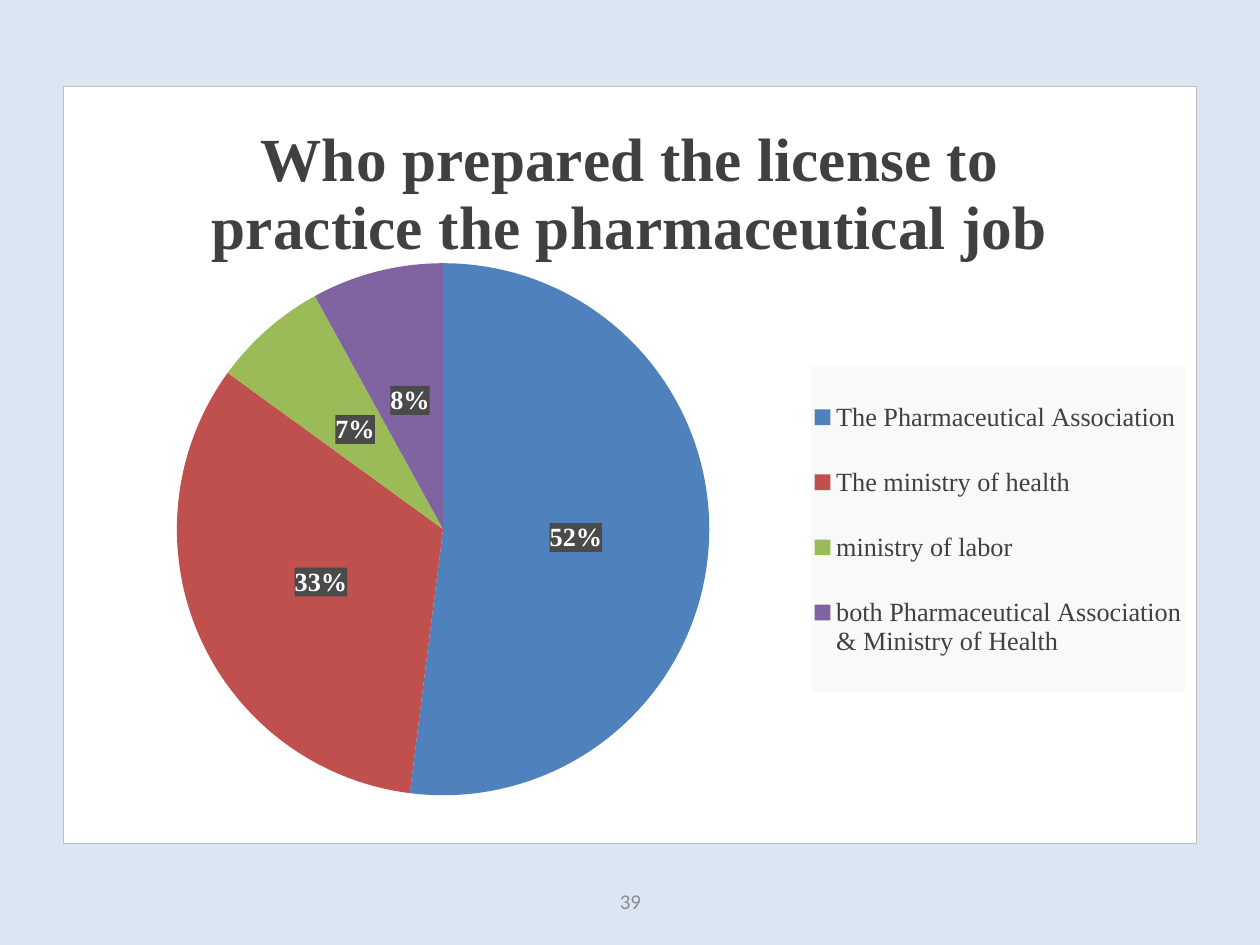
from lxml import etree
from pptx import Presentation, util as u
from pptx.chart.data import CategoryChartData
from pptx.dml.color import RGBColor
from pptx.enum import chart as ch, text
from pptx.oxml import parse_xml
from pptx.oxml.ns import nsdecls, qn

PX = u.Inches(1) // 126
BACKGROUND = RGBColor(0xDC, 0xE6, 0xF2)
WHITE = RGBColor(0xFF, 0xFF, 0xFF)
BLACK = RGBColor(0, 0, 0)
INK = RGBColor(0x40, 0x40, 0x40)
BORDER = RGBColor(0xBF, 0xBF, 0xBF)
LABEL_BOX = RGBColor(0x4A, 0x4A, 0x4A)
LEGEND_BOX = RGBColor(0xF9, 0xF9, 0xF9)
PAGE_GREY = RGBColor(0x8C, 0x8C, 0x8C)
SERIF = "Times New Roman"

ANSWERS = [
    ("The Pharmaceutical Association", 52, RGBColor(0x4F, 0x81, 0xBD)),
    ("The ministry of health", 33, RGBColor(0xC0, 0x50, 0x4D)),
    ("ministry of labor", 7, RGBColor(0x9B, 0xBB, 0x59)),
    ("both Pharmaceutical Association & Ministry of Health", 8,
     RGBColor(0x80, 0x64, 0xA2)),
]


def add_box(part, fill, border=None):
    """Give a chart part that already has text properties a fill and a border."""
    line = (f'<a:ln w="9525"><a:solidFill><a:srgbClr val="{border}"/></a:solidFill></a:ln>'
            if border else '<a:ln><a:noFill/></a:ln>')
    part.find(qn("c:txPr")).addprevious(parse_xml(
        f'<c:spPr {nsdecls("c", "a")}><a:solidFill><a:srgbClr val="{fill}"/>'
        f'</a:solidFill>{line}</c:spPr>'))


def set_layout(part, x, y, w, h, inner=False):
    """Place a chart part by fractions of the chart area."""
    for old in part.findall(qn("c:layout")):
        part.remove(old)
    layout = etree.Element(qn("c:layout"))
    manual = etree.SubElement(layout, qn("c:manualLayout"))
    settings = [("layoutTarget", "inner")] if inner else []
    settings += [("xMode", "edge"), ("yMode", "edge"),
                 ("x", x), ("y", y), ("w", w), ("h", h)]
    for tag, value in settings:
        etree.SubElement(manual, qn(f"c:{tag}")).set("val", str(value))
    position = part.find(qn("c:legendPos"))
    if position is None:
        part.insert(0, layout)
    else:
        position.addnext(layout)


prs = Presentation()
prs.slide_width, prs.slide_height = 1260 * PX, 945 * PX
slide = prs.slides.add_slide(prs.slide_layouts[6])
slide.background.fill.solid()
slide.background.fill.fore_color.rgb = BACKGROUND

# Pie chart
answers = CategoryChartData()
answers.categories = [name for name, _, _ in ANSWERS]
answers.add_series("Series 1", [share for _, share, _ in ANSWERS])
chart = slide.shapes.add_chart(
    ch.XL_CHART_TYPE.PIE, 63 * PX, 86 * PX, 1134 * PX, 758 * PX, answers).chart
chart.font.name, chart.font.size = "Calibri", u.Pt(10)
chart.font.color.rgb = BLACK
add_box(chart.element, WHITE, BORDER)

title = chart.chart_title.text_frame
title.text = "Who prepared the license to practice the pharmaceutical job"
title_font = title.paragraphs[0].runs[0].font
title_font.name, title_font.size, title_font.bold = SERIF, u.Pt(35), True
title_font.color.rgb = INK
chart.chart_title.include_in_layout = False

plot = chart.plots[0]
plot.vary_by_categories = True
set_layout(chart.element.chart.plotArea, 0.1, 0.21, 0.47, 0.75, inner=True)
for index, (_, _, color) in enumerate(ANSWERS):
    fill = plot.series[0].points[index].format.fill
    fill.solid()
    fill.fore_color.rgb = color

# Percentages on the slices
labels = plot.series[0].data_labels
labels.show_percentage, labels.show_value = True, False
labels.number_format, labels.number_format_is_linked = "0%", False
labels.position = ch.XL_LABEL_POSITION.CENTER
labels.font.name, labels.font.size, labels.font.bold = SERIF, u.Pt(15), True
labels.font.color.rgb = WHITE
add_box(plot.series[0]._element.find(qn("c:dLbls")), LABEL_BOX)

# Legend
chart.has_legend = True
legend = chart.legend
legend.position = ch.XL_LEGEND_POSITION.RIGHT
legend.include_in_layout = False
legend.font.name, legend.font.size = SERIF, u.Pt(15)
legend.font.color.rgb = INK
set_layout(legend._element, 0.66, 0.37, 0.33, 0.43)
add_box(legend._element, LEGEND_BOX)

# Page number
page = slide.shapes.add_textbox(431 * PX, 876 * PX, 399 * PX, 50 * PX).text_frame
page.word_wrap = True
page.vertical_anchor = text.MSO_ANCHOR.MIDDLE
page.text = "39"
page.paragraphs[0].alignment = text.PP_ALIGN.CENTER
page_font = page.paragraphs[0].runs[0].font
page_font.name, page_font.size = "Calibri", u.Pt(12)
page_font.color.rgb = PAGE_GREY

prs.save("out.pptx")
